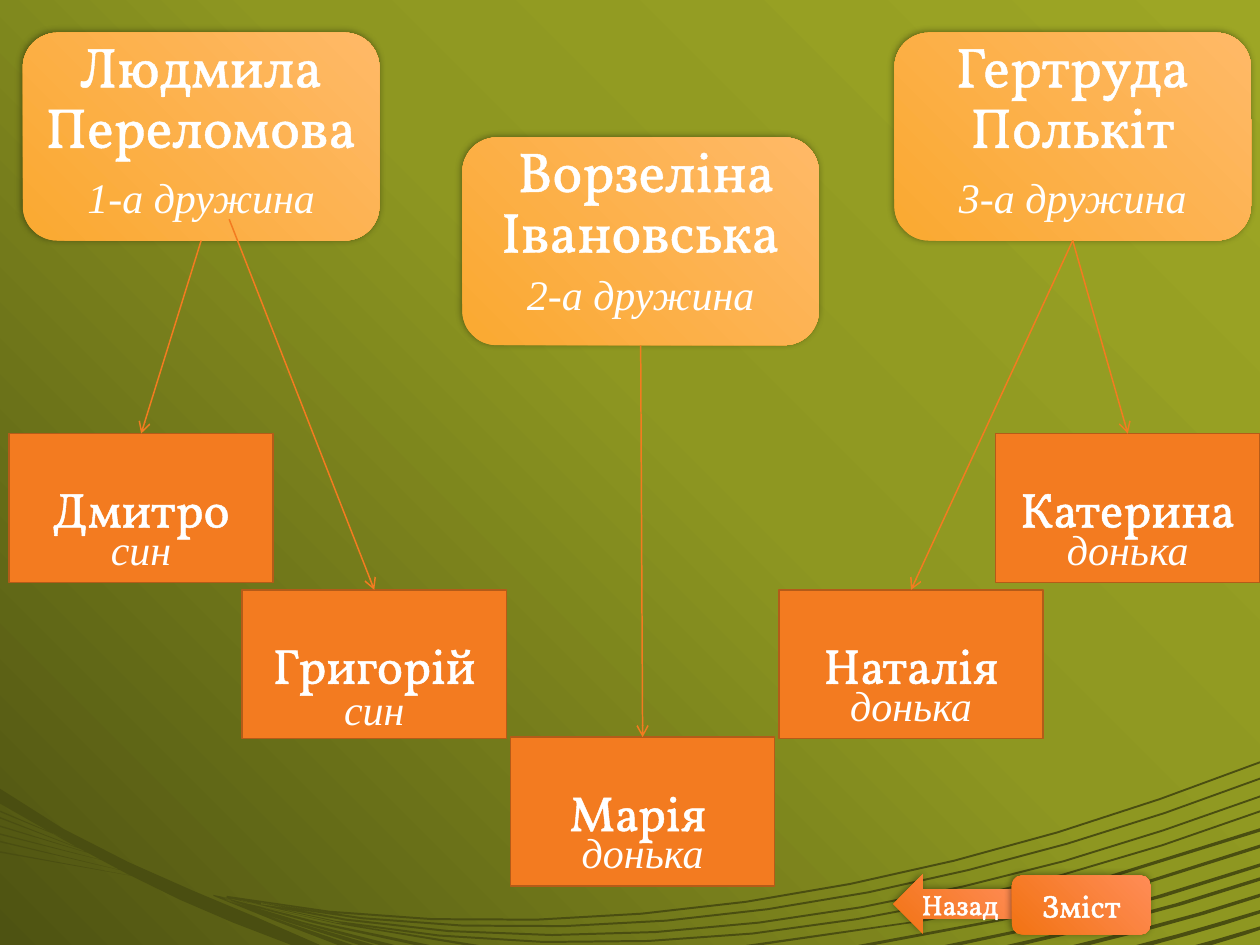
from copy import deepcopy

from lxml import etree
from pptx import Presentation
from pptx import util as u
from pptx.dml import color
from pptx.enum import shapes, text
from pptx.oxml import ns

COLORS = {
    "white": "FFFFFF",
    "black": "000000",
    "wave": "4A4E11",
    "box": "F37B20",
    "edge": "B45B18",
}
BACKDROP = [(0, "9DA625"), (0.45, "8E9721"), (1, "4E5312")]
CARD = [(0, "FAA931"), (1, "FFB967")]
BUTTON = [(0, "F27313"), (1, "FF8C56")]
SHAPE = shapes.MSO_SHAPE
CARD_SIZE = (7.19, 4.19)
CHILD_SIZE = (5.33, 3)
ROLE_SIZE = (6.53, 1.17)
RIGHT, BOTTOM = 25.42, 19.05


def rgb(name):
    return color.RGBColor.from_string(COLORS[name])


def cm(*values):
    return [u.Cm(value) for value in values]


def sub(parent, tag, **attributes):
    return etree.SubElement(parent, ns.qn(tag), **attributes)


def paint_gradient(fill, element, stops, angle):
    fill.gradient()
    fill.gradient_angle = angle
    stop_list = next(element.iter(ns.qn("a:gsLst")))
    while len(stop_list) < len(stops):
        stop_list.append(deepcopy(stop_list[0]))
    for stop, (position, value) in zip(fill.gradient_stops, stops):
        stop.position = position
        stop.color.rgb = color.RGBColor.from_string(value)


def add_shadow(shape):
    effects = sub(shape._element.spPr, "a:effectLst")
    shadow = sub(effects, "a:outerShdw", blurRad=str(u.Pt(4)), dist=str(u.Pt(1)),
                 dir=str(225 * 60000), algn="ctr", rotWithShape="0")
    tone = sub(shadow, "a:srgbClr", val=COLORS["black"])
    sub(tone, "a:alpha", val="40000")


def add_span(para, words, size, font, italic=False, outline=0):
    span = para.add_run()
    span.text = words
    span.font.size = u.Pt(size)
    span.font.name = font
    span.font.italic = italic
    span.font.color.rgb = rgb("white")
    if outline:
        line = etree.Element(ns.qn("a:ln"), w=str(u.Pt(outline)))
        sub(sub(line, "a:solidFill"), "a:srgbClr", val=COLORS["white"])
        span.font._element.insert(0, line)


def centred_para(shape):
    para = shape.text_frame.paragraphs[0]
    para.alignment = text.PP_ALIGN.CENTER
    return para


def add_label(page, centre, top, size):
    width, height = size
    box = page.shapes.add_textbox(*cm(centre - width / 2, top, width, height))
    box.text_frame.word_wrap = True
    box.text_frame.auto_size = text.MSO_AUTO_SIZE.SHAPE_TO_FIT_TEXT
    para = centred_para(box)
    para.line_spacing = 0.9
    return para


def add_role(page, centre, top, words):
    para = add_label(page, centre, top, ROLE_SIZE)
    add_span(para, words, 24, "Times New Roman", italic=True)


def add_glossy(page, kind, left, top, size, stops):
    shape = page.shapes.add_shape(kind, *cm(left, top, *size))
    paint_gradient(shape.fill, shape._element, stops, 45)
    shape.line.fill.background()
    add_shadow(shape)
    return shape


def add_wife(page, left, top, name_spans, name_width, role, role_drop):
    card = add_glossy(page, SHAPE.ROUNDED_RECTANGLE, left, top, CARD_SIZE, CARD)
    centre = left + CARD_SIZE[0] / 2
    para = add_label(page, centre, top, (name_width, 2.72))
    for words, outline in name_spans:
        add_span(para, words, 32, "Vollkorn", outline=outline)
    add_role(page, centre, top + role_drop, role)
    return card


def add_child(page, left, top, name, role, role_drop=1.8):
    box = page.shapes.add_shape(SHAPE.RECTANGLE, *cm(left, top, *CHILD_SIZE))
    box.shadow.inherit = False
    box.fill.solid()
    box.fill.fore_color.rgb = rgb("box")
    box.line.color.rgb = rgb("edge")
    box.line.width = u.Pt(0.85)
    box.text_frame.vertical_anchor = text.MSO_ANCHOR.MIDDLE
    add_span(centred_para(box), name, 28, "Vollkorn", outline=1.45)
    add_role(page, left + CHILD_SIZE[0] / 2, top + role_drop, role)
    return box


def add_arrow(page, child, parent=None, start=(0, 0)):
    arrow = page.shapes.add_connector(shapes.MSO_CONNECTOR.STRAIGHT, *cm(*start, *start))
    if parent is not None:
        arrow.begin_connect(parent, 2)
    arrow.end_connect(child, 0)
    arrow.line.color.rgb = rgb("box")
    arrow.line.width = u.Pt(0.85)
    sub(arrow.line._get_or_add_ln(), "a:tailEnd", type="arrow")
    sub(arrow._element.spPr, "a:effectLst")


def add_button(page, kind, left, top, width, words, size):
    button = add_glossy(page, kind, left, top, (width, 1.19), BUTTON)
    button.text_frame.word_wrap = False
    button.text_frame.vertical_anchor = text.MSO_ANCHOR.MIDDLE
    add_span(centred_para(button), words, size, "Vollkorn", outline=0.25)


def curve(points, steps):
    samples = []
    for step in range(steps + 1):
        t = step / steps
        weights = ((1 - t) ** 3, 3 * t * (1 - t) ** 2, 3 * t * t * (1 - t), t ** 3)
        samples.append(tuple(100 * sum(w * p[axis] for w, p in zip(weights, points))
                             for axis in (0, 1)))
    return samples


def sagging(start, end):
    (x0, y0), (x1, y1) = start, end
    sag = 0.0041 * (x1 - x0) ** 2
    inner = [(x0 + (x1 - x0) * f, y0 + (y1 - y0) * f + sag) for f in (1 / 3, 2 / 3)]
    return [start, *inner, end]


def ribbon(upper, lower, steps=3):
    return curve(upper, steps) + curve(lower, steps)[::-1]


def wave_ribbons():
    ribbons = [ribbon([(0, 15.9), (2.1, 17.4), (4.4, 18.1), (6.45, BOTTOM)],
                      [(0, 16.2), (2.5, 17.65), (3.8, 18.3), (5.87, BOTTOM)], 5)]
    for strand in (
        [(RIGHT, 15.34), (18.67, 17.98), (11.43, 19.3), (4.57, 18.06)],
        [(RIGHT, 15.67), (19.02, 18.11), (12.01, 19.43), (5.26, 18.19)],
        [(RIGHT, 16.03), (18.92, 18.47), (11.76, 19.69), (4.9, 18.14)],
        [(RIGHT, 16.33), (18.85, 18.75), (11.58, 19.89), (4.67, 18.11)],
    ):
        ribbons.append(ribbon(strand, [(x, y + 0.04) for x, y in strand], 10))
    for y, x in ((16.69, 15.04), (17.02, 17.3), (17.4, 19.05), (17.68, 20.3),
                 (18.01, 21.64), (18.34, 22.91), (18.67, 24.1)):
        ribbons.append(ribbon(sagging((RIGHT, y), (x, BOTTOM)),
                              sagging((RIGHT, y + 0.07), (x + 0.33, BOTTOM))))
    for x in (6.81, 7.24, 7.65, 8.36, 9.35):
        ribbons.append(ribbon(sagging((4.3, 18.04), (x + 0.3, BOTTOM)),
                              sagging((4.3, 18.06), (x, BOTTOM)), 2))
    for y, tip in ((16.34, (1.75, 17.09)), (16.47, (2.03, 17.27)), (16.64, (2.03, 17.27)),
                   (16.8, (2.29, 17.4)), (16.95, (2.59, 17.58)), (17.16, (2.79, 17.68))):
        ribbons.append(ribbon(sagging((0, y), tip), sagging((0, y + 0.03), tip), 1))
    return ribbons


def add_wave(page):
    ribbons = wave_ribbons()
    builder = page.shapes.build_freeform(*ribbons[0][0], scale=u.Cm(0.01))
    for index, outline in enumerate(ribbons):
        if index:
            builder.move_to(*outline[0])
        builder.add_line_segments(outline[1:], close=True)
    wave = builder.convert_to_shape()
    wave.shadow.inherit = False
    wave.fill.solid()
    wave.fill.fore_color.rgb = rgb("wave")
    wave.line.fill.background()


def main():
    deck = Presentation()
    deck.slide_width, deck.slide_height = cm(25.4, 19.05)
    page = deck.slides.add_slide(deck.slide_layouts[6])
    paint_gradient(page.background.fill, page._element, BACKDROP, 225)
    add_wave(page)

    first = add_wife(page, 0.46, 0.66, [("Людмила Переломова", 1.45)], 7.19, "1-а дружина", 2.79)
    second = add_wife(page, 9.32, 2.77, [(" ", 0), ("Ворзеліна Івановська", 1.45)], 6.6,
                      "2-а дружина", 2.64)
    third = add_wife(page, 18.03, 0.66, [("Гертруда Полькіт", 1.45)], 6.6, "3-а дружина", 2.79)

    natalia = add_child(page, 15.7, 11.89, "Наталія", "донька")
    kateryna = add_child(page, 20.07, 8.74, "Катерина", "донька")
    maria = add_child(page, 10.29, 14.86, "Марія ", "донька")
    hryhorii = add_child(page, 4.88, 11.89, "Григорій", "син", 1.88)
    dmytro = add_child(page, 0.18, 8.74, "Дмитро", "син")

    for parent, child in ((third, kateryna), (third, natalia), (second, maria), (first, dmytro)):
        add_arrow(page, child, parent)
    add_arrow(page, hryhorii, start=(4.62, 4.42))

    add_button(page, SHAPE.LEFT_ARROW, 18.01, 17.63, 2.39, "Назад", 16)
    add_button(page, SHAPE.ROUNDED_RECTANGLE, 20.4, 17.65, 2.79, "Зміст", 18)
    deck.save("out.pptx")


if __name__ == "__main__":
    main()
